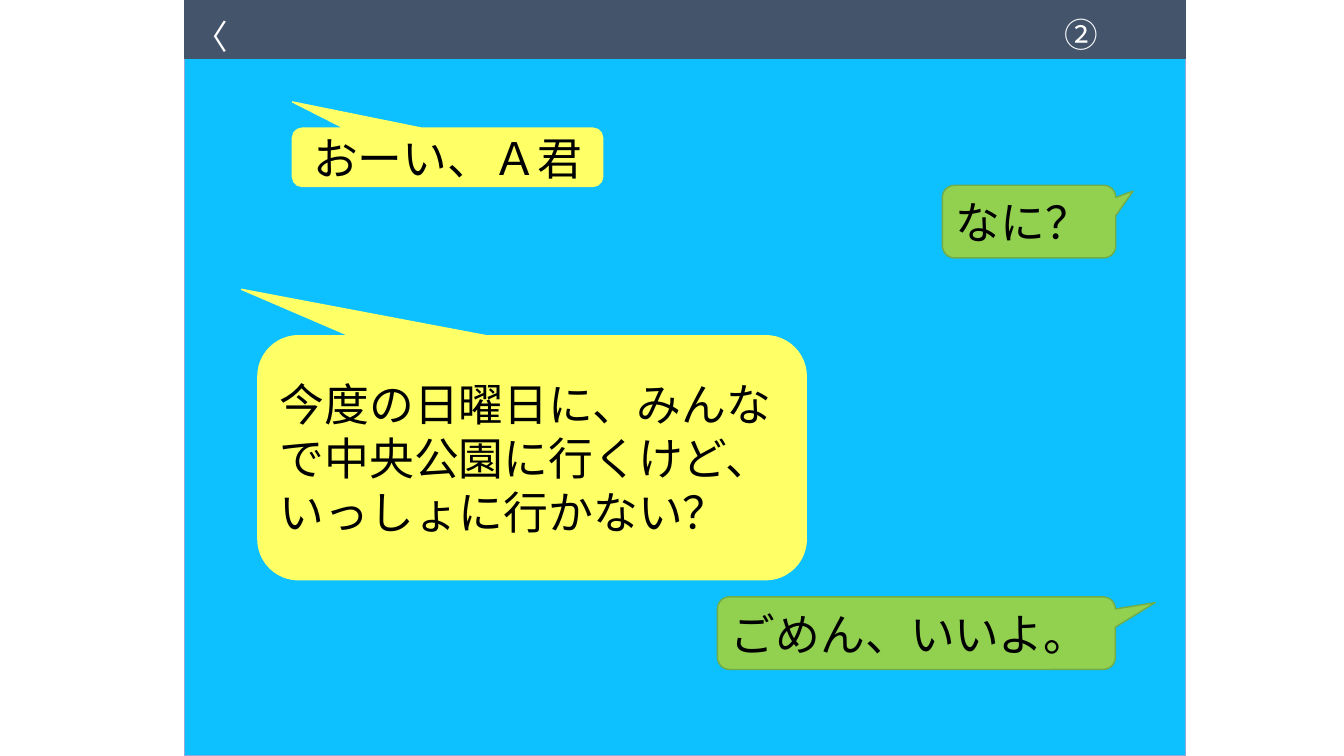
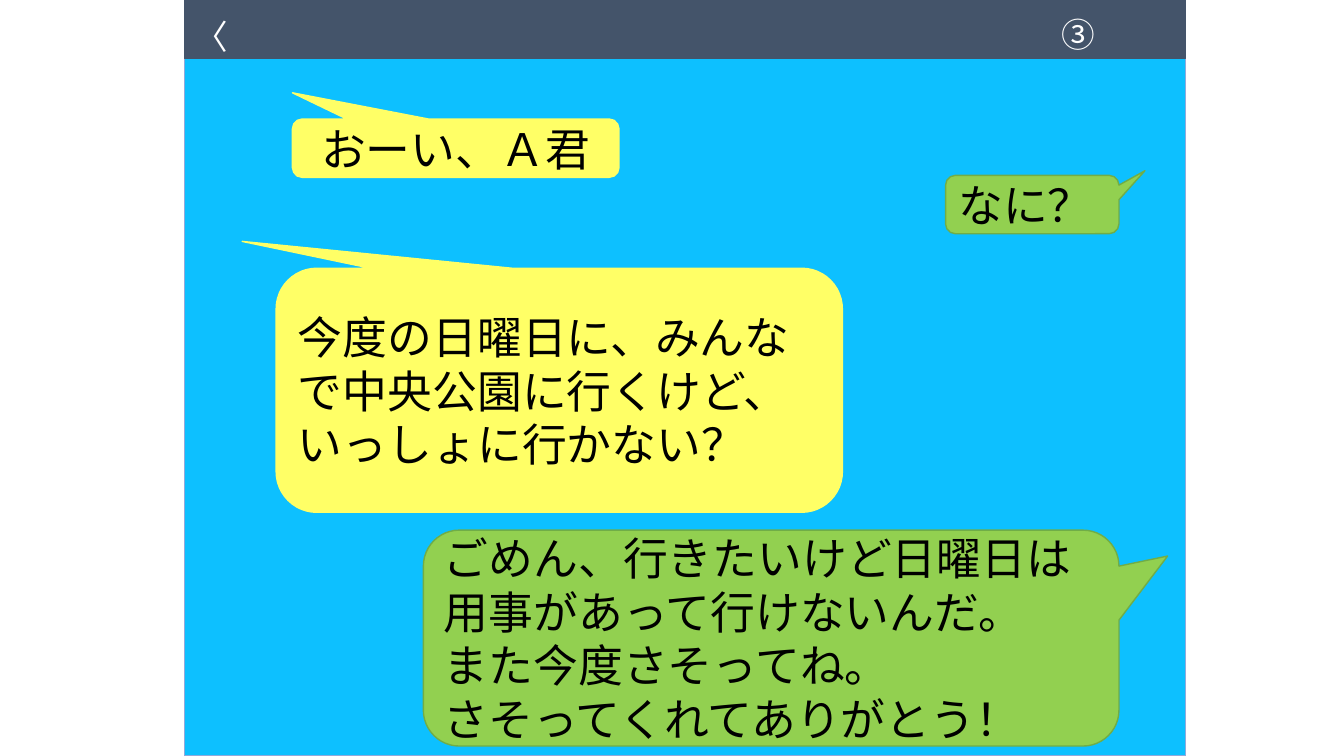
from dataclasses import dataclass

from lxml.etree import SubElement
from pptx import Presentation
from pptx.dml.color import RGBColor
from pptx.enum.shapes import MSO_SHAPE
from pptx.enum.text import MSO_ANCHOR, PP_ALIGN
from pptx.oxml.ns import qn
from pptx.shapes.autoshape import Shape
from pptx.slide import Slide
from pptx.text.text import TextFrame
from pptx.util import Cm, Pt

FONT = "Noto Sans CJK JP"
SCREEN_LEFT, SCREEN_WIDTH, SCREEN_HEIGHT = 4.65, 25.22, 19.05
HEADER_HEIGHT = 1.47


@dataclass(frozen=True)
class Box:
    """Position and size in centimetres."""
    left: float
    top: float
    width: float
    height: float

    def lengths(self) -> tuple[Cm, Cm, Cm, Cm]:
        return Cm(self.left), Cm(self.top), Cm(self.width), Cm(self.height)


@dataclass(frozen=True)
class Speaker:
    fill: str
    line: str


@dataclass(frozen=True)
class Message:
    speaker: Speaker
    box: Box
    tail: tuple[float, float]
    paragraphs: tuple[str, ...]
    align: PP_ALIGN = PP_ALIGN.LEFT


@dataclass(frozen=True)
class Chat:
    number: str
    number_box: Box
    messages: tuple[Message, ...]


FRIEND = Speaker("FFFF66", "FFFF66")
A_KUN = Speaker("92D050", "70AD47")

CALL = ("おーい、Ａ君",)
ANSWER = ("なに？",)
INVITATION = ("今度の日曜日に、みんなで中央公園に行くけど、いっしょに行かない？",)
SHORT_REPLY = ("ごめん、いいよ。",)
KIND_REPLY = (
    "ごめん、行きたいけど日曜日は用事があって行けないんだ。",
    "また今度さそってね。",
    "さそってくれてありがとう！",
)

CHATS = (
    Chat("②", Box(26.57, 0.23, 3.0, 1.27), (
        Message(A_KUN, Box(23.75, 4.67, 4.37, 1.83), (0.6, -0.42), ANSWER),
        Message(FRIEND, Box(7.37, 3.23, 7.82, 1.47), (-0.5, -0.95), CALL, PP_ALIGN.CENTER),
        Message(A_KUN, Box(18.08, 15.04, 10.03, 1.83), (0.6, -0.42), SHORT_REPLY),
        Message(FRIEND, Box(6.5, 8.46, 13.82, 6.15), (-0.53, -0.69), INVITATION),
    )),
    Chat("③", Box(26.49, 0.23, 3.07, 1.27), (
        Message(A_KUN, Box(23.83, 4.42, 4.37, 1.47), (0.65, -0.58), ANSWER),
        Message(FRIEND, Box(7.37, 3.0, 8.23, 1.47), (-0.5, -0.95), CALL, PP_ALIGN.CENTER),
        Message(A_KUN, Box(10.67, 13.36, 17.53, 5.44), (0.57, -0.38), KIND_REPLY),
        Message(FRIEND, Box(6.96, 6.76, 14.27, 6.15), (-0.56, -0.61), INVITATION),
    )),
)


def color(hex_code: str) -> RGBColor:
    return RGBColor.from_string(hex_code)


def add_panel(slide: Slide, kind: MSO_SHAPE, box: Box, fill: str, line: str) -> Shape:
    panel = slide.shapes.add_shape(kind, *box.lengths())
    panel.shadow.inherit = False
    panel.fill.solid()
    panel.fill.fore_color.rgb = color(fill)
    panel.line.color.rgb = color(line)
    panel.line.width = Pt(1)
    return panel


def write(frame: TextFrame, paragraphs: tuple[str, ...], size: int, ink: str,
          align: PP_ALIGN = PP_ALIGN.LEFT) -> None:
    frame.word_wrap = True
    for index, words in enumerate(paragraphs):
        paragraph = frame.add_paragraph() if index else frame.paragraphs[0]
        paragraph.alignment = align
        run = paragraph.add_run()
        run.text = words
        run.font.size = Pt(size)
        run.font.color.rgb = color(ink)
        run.font.name = FONT
        # Japanese characters take the East Asian typeface
        SubElement(run.font._element, qn("a:ea"), typeface=FONT)


def add_header_label(slide: Slide, box: Box, label: str) -> None:
    frame = slide.shapes.add_textbox(*box.lengths()).text_frame
    write(frame, (label,), 24, "FFFFFF")


def add_message(slide: Slide, message: Message) -> None:
    bubble = add_panel(slide, MSO_SHAPE.ROUNDED_RECTANGULAR_CALLOUT, message.box,
                       message.speaker.fill, message.speaker.line)
    bubble.adjustments[0], bubble.adjustments[1] = message.tail
    bubble.text_frame.vertical_anchor = MSO_ANCHOR.MIDDLE
    write(bubble.text_frame, message.paragraphs, 32, "000000", message.align)


def add_chat(slide: Slide, chat: Chat) -> None:
    # Phone screen and header band
    screen = Box(SCREEN_LEFT, 0, SCREEN_WIDTH, SCREEN_HEIGHT)
    header = Box(SCREEN_LEFT, 0, SCREEN_WIDTH, HEADER_HEIGHT)
    add_panel(slide, MSO_SHAPE.RECTANGLE, screen, "0DC0FF", "8FAADC")
    add_panel(slide, MSO_SHAPE.RECTANGLE, header, "44546A", "44546A")
    # Conversation
    for message in chat.messages:
        add_message(slide, message)
    # Back mark and chat number
    add_header_label(slide, Box(SCREEN_LEFT, 0.28, 3.71, 1.27), "〈")
    add_header_label(slide, chat.number_box, chat.number)


def main() -> None:
    deck = Presentation()
    deck.slide_width, deck.slide_height = Cm(33.87), Cm(SCREEN_HEIGHT)
    blank = deck.slide_layouts[6]
    for chat in CHATS:
        add_chat(deck.slides.add_slide(blank), chat)
    deck.save("out.pptx")


if __name__ == "__main__":
    main()
